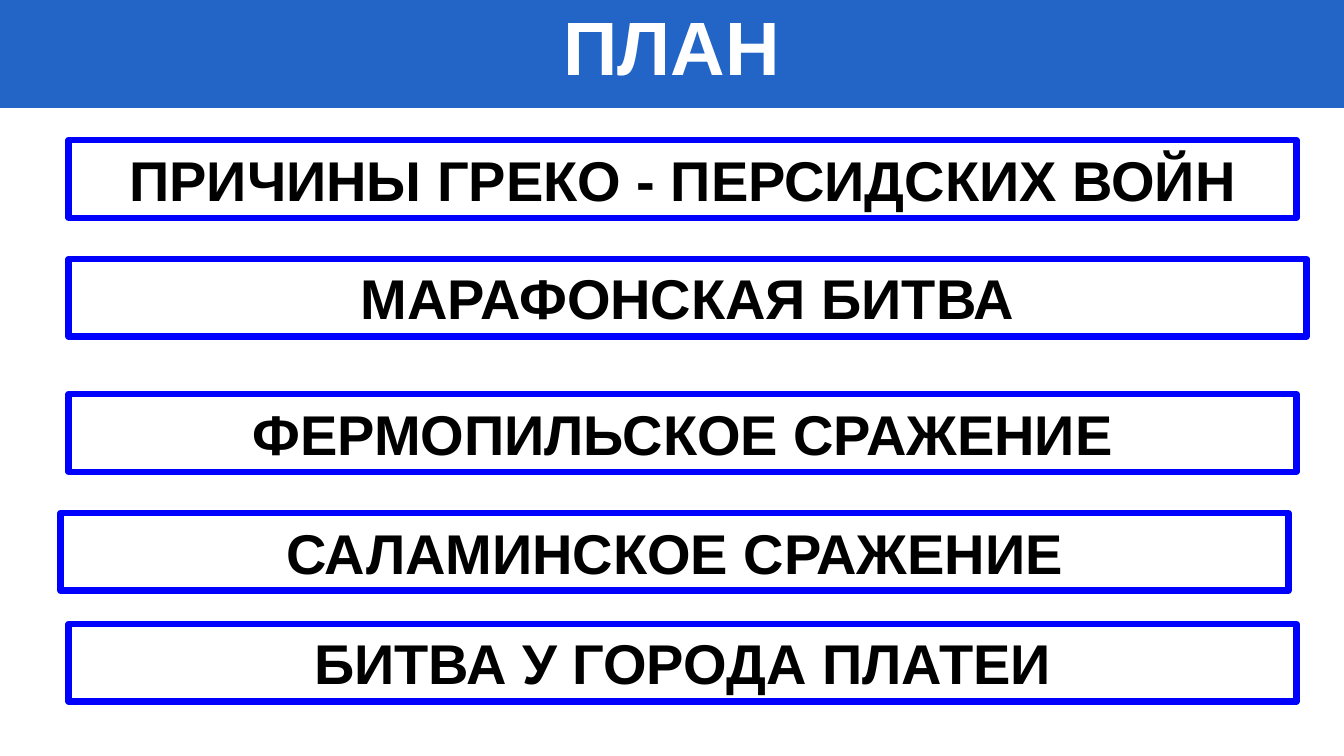
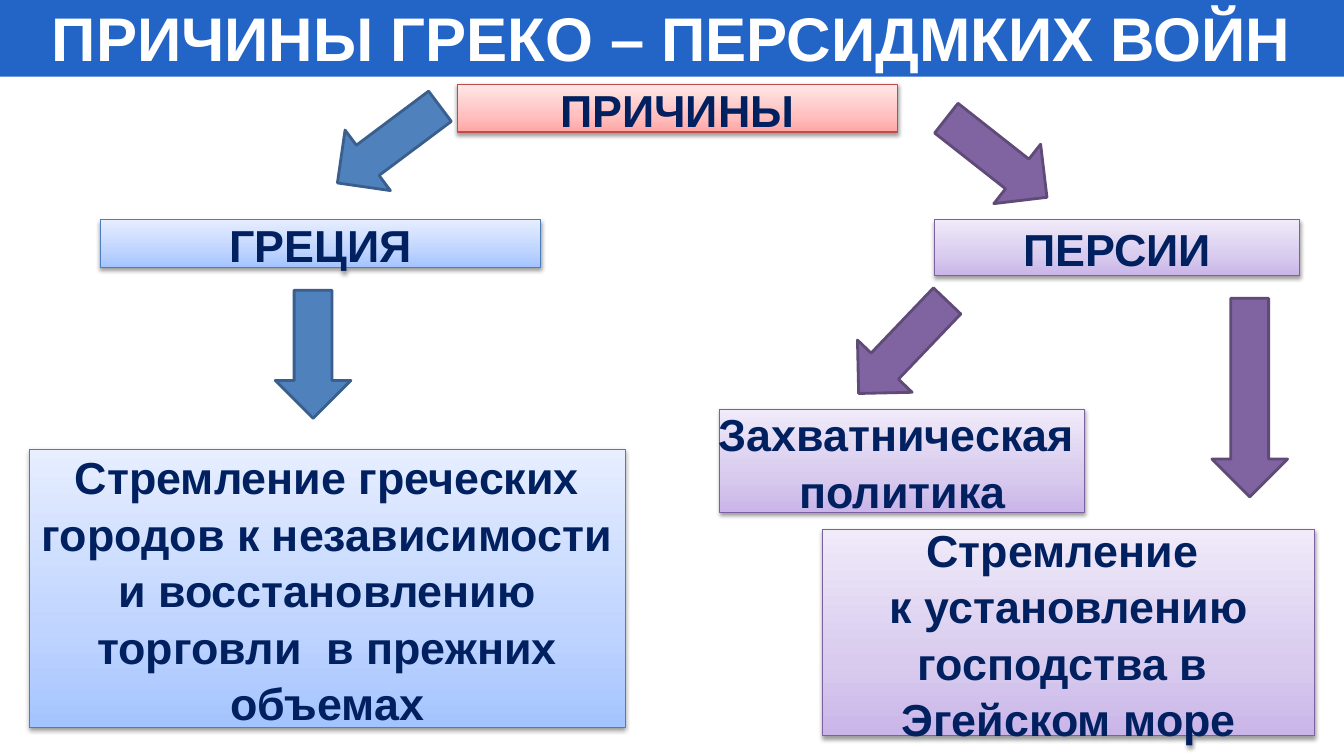
from copy import deepcopy
from dataclasses import dataclass

from lxml.etree import SubElement
from pptx import Presentation
from pptx.dml.color import RGBColor
from pptx.enum.shapes import MSO_SHAPE
from pptx.enum.text import MSO_ANCHOR, MSO_AUTO_SIZE, PP_ALIGN
from pptx.oxml.ns import qn
from pptx.util import Inches, Pt


@dataclass(frozen=True)
class Palette:
    line: str
    stops: tuple = ()
    arrow: str = ""
    arrow_line: str = ""


@dataclass(frozen=True)
class Theme:
    font: str = "Arial"
    band: str = "2365C7"
    white: str = "FFFFFF"
    black: str = "000000"
    frame: str = "0000FF"
    navy: str = "002060"
    plan_size: int = 40
    cause_size: int = 32
    cause_spacing: float = 1.05
    stop_positions: tuple = (0, 0.35, 1)
    red: Palette = Palette("BF4C48", ("FFA6A5", "FFC0BF", "FFE7E7"))
    blue: Palette = Palette("4B7EBC", ("A4C4FF", "BFD4FF", "E6EEFF"), "4F81BD", "3A5F8C")
    purple: Palette = Palette("7D60A0", ("C9B5E8", "D8CBEE", "F0EAF9"), "8064A2", "5F4A78")


T = Theme()
SLIDE_W, SLIDE_H = 13.33, 7.5

# Content: title, title size, band height
PLAN_TITLE = ("ПЛАН", 54, 1.07)
CAUSES_TITLE = ("ПРИЧИНЫ ГРЕКО – ПЕРСИДМКИХ ВОЙН", 44, 0.76)

# Plan items: text, left, top, width
PLAN_H = 0.77
PLAN = [
    ("ПРИЧИНЫ ГРЕКО - ПЕРСИДСКИХ ВОЙН", 0.68, 1.39, 12.18),
    ("МАРАФОНСКАЯ БИТВА", 0.68, 2.57, 12.28),
    ("ФЕРМОПИЛЬСКОЕ СРАЖЕНИЕ", 0.68, 3.91, 12.18),
    ("САЛАМИНСКОЕ СРАЖЕНИЕ", 0.6, 5.09, 12.18),
    ("БИТВА У ГОРОДА ПЛАТЕИ", 0.68, 6.19, 12.18),
]

# Cause boxes: lines, palette, (left, top, width, height)
CAUSES = [
    (["ПРИЧИНЫ"], T.red, (4.54, 0.84, 4.36, 0.47)),
    (["ГРЕЦИЯ"], T.blue, (1, 2.18, 4.36, 0.47)),
    (["Стремление греческих", "городов к независимости", "и восстановлению",
      "торговли  в прежних", "объемах"], T.blue, (0.29, 4.46, 5.91, 2.76)),
    (["ПЕРСИИ"], T.purple, (9.27, 2.18, 3.62, 0.55)),
    (["Захватническая ", "политика"], T.purple, (7.14, 4.06, 3.62, 1.02)),
    (["Стремление ", "к установлению", "господства в ", "Эгейском море"],
     T.purple, (8.16, 5.25, 4.88, 2.05)),
]

# Arrows: palette, left, top, length, rotation
ARROW_W = 0.75
ARROWS = [
    (T.blue, 3.48, 0.8, 1.27, 53.2),
    (T.blue, 2.73, 2.88, 1.27, 0),
    (T.purple, 9.51, 0.93, 1.27, 308.2),
    (T.purple, 8.58, 2.81, 1.27, 43.7),
    (T.purple, 12.02, 2.96, 1.97, 0),
]


def rgb(color):
    return RGBColor.from_string(color)


def write(tf, lines, size, color, spacing=1.0):
    for i, line in enumerate(lines):
        p = tf.add_paragraph() if i else tf.paragraphs[0]
        p.alignment = PP_ALIGN.CENTER
        p.line_spacing = spacing
        r = p.add_run()
        r.text = line
        r.font.name, r.font.size, r.font.bold = T.font, Pt(size), True
        r.font.color.rgb = rgb(color)


def add_shape(s, kind, box, line, line_width, fill=None):
    sp = s.shapes.add_shape(kind, *map(Inches, box))
    sp.shadow.inherit = False
    sp.line.color.rgb = rgb(line)
    sp.line.width = Pt(line_width)
    if fill:
        sp.fill.solid()
        sp.fill.fore_color.rgb = rgb(fill)
    return sp


def add_gradient(sp, colors):
    sp.fill.gradient()
    sp.fill.gradient_angle = 90
    stop_list = sp.element.spPr.find(qn("a:gradFill")).find(qn("a:gsLst"))
    stop_list.append(deepcopy(stop_list[0]))
    for stop, position, color in zip(sp.fill.gradient_stops, T.stop_positions, colors):
        stop.position = position
        stop.color.rgb = rgb(color)


def add_shadow(sp):
    effects = sp.element.spPr.find(qn("a:effectLst"))
    shadow = SubElement(effects, qn("a:outerShdw"), blurRad=str(Pt(3.1)),
                        dist=str(Pt(1.6)), dir="5400000", rotWithShape="0")
    color = SubElement(shadow, qn("a:srgbClr"), val=T.black)
    SubElement(color, qn("a:alpha"), val="38000")


def add_slide(prs, title, size, height):
    """Add a slide whose title placeholder is the full-width band."""
    s = prs.slides.add_slide(prs.slide_layouts[5])
    band = s.shapes.title
    band.left, band.top = Inches(0), Inches(0)
    band.width, band.height = Inches(SLIDE_W), Inches(height)
    band.fill.solid()
    band.fill.fore_color.rgb = rgb(T.band)
    tf = band.text_frame
    tf.margin_left = tf.margin_right = tf.margin_top = tf.margin_bottom = 0
    tf.auto_size, tf.vertical_anchor = MSO_AUTO_SIZE.NONE, MSO_ANCHOR.TOP
    write(tf, [title], size, T.white)
    return s


def build_plan(prs):
    s = add_slide(prs, *PLAN_TITLE)
    for text, left, top, width in PLAN:
        sp = add_shape(s, MSO_SHAPE.RECTANGLE, (left, top, width, PLAN_H),
                       T.frame, 4.5, T.white)
        tf = sp.text_frame
        tf.word_wrap, tf.vertical_anchor = True, MSO_ANCHOR.TOP
        write(tf, [text], T.plan_size, T.black)


def build_causes(prs):
    s = add_slide(prs, *CAUSES_TITLE)
    # Boxes
    for lines, palette, box in CAUSES:
        sp = add_shape(s, MSO_SHAPE.RECTANGLE, box, palette.line, 0.75)
        add_gradient(sp, palette.stops)
        add_shadow(sp)
        tf = sp.text_frame
        tf.word_wrap, tf.vertical_anchor = False, MSO_ANCHOR.MIDDLE
        write(tf, lines, T.cause_size, T.navy, T.cause_spacing)
    # Arrows
    for palette, left, top, length, rotation in ARROWS:
        sp = add_shape(s, MSO_SHAPE.DOWN_ARROW, (left, top, ARROW_W, length),
                       palette.arrow_line, 2, palette.arrow)
        sp.rotation = rotation


def main():
    prs = Presentation()
    prs.slide_width, prs.slide_height = Inches(SLIDE_W), Inches(SLIDE_H)
    build_plan(prs)
    build_causes(prs)
    prs.save("out.pptx")


if __name__ == "__main__":
    main()
